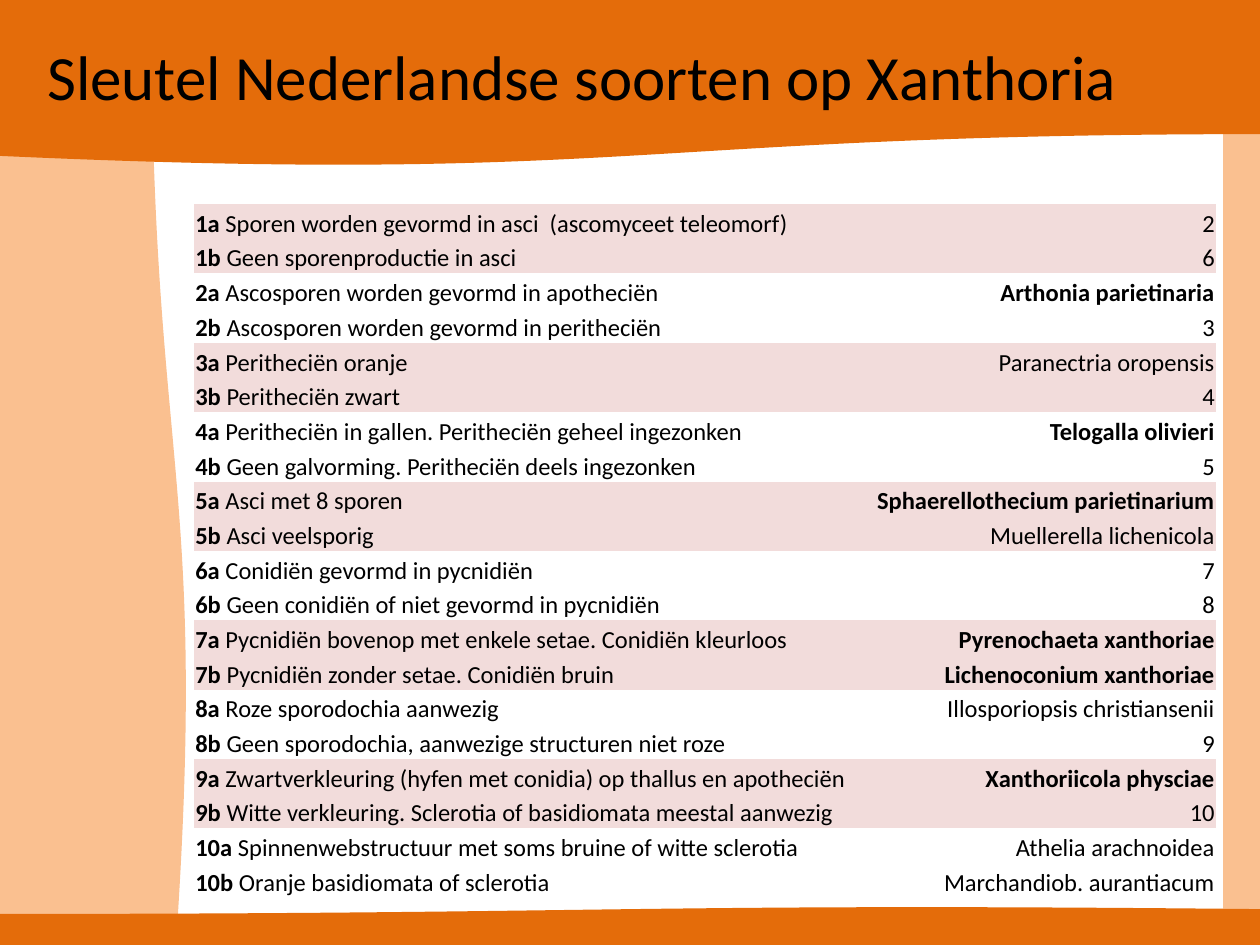
"""Build the slide with the key to Dutch species on Xanthoria."""
import pptx
import pptx.util
import pptx.dml.color
import pptx.enum.shapes
import pptx.enum.text
import pptx.oxml.ns

Pt = pptx.util.Pt
SHAPE = pptx.enum.shapes.MSO_SHAPE
ALIGN = pptx.enum.text.PP_ALIGN
ANCHOR = pptx.enum.text.MSO_ANCHOR

FONT = "Calibri"
COLORS = {"text": "000000", "side": "FAC090", "band": "E46C0A", "row": "F2DCDB"}
PLAIN_STYLE = "{2D5ABB26-0587-4C30-8999-92F81FD0307C}"
ROW = 19.84

FRAME = [
    (SHAPE.RECTANGLE, "side", 699.84, 0, 20.16, 540, 0),
    (SHAPE.FLOWCHART_DOCUMENT, "side", -216.72, 216.72, 540, 106.56, 270),
    (SHAPE.FLOWCHART_DOCUMENT, "band", 0, 0, 720, 94.32, 0),
    (SHAPE.FLOWCHART_DOCUMENT, "band", 0, 519.12, 720, 20.88, 180),
]

STEPS = [
    ("Sporen worden gevormd in asci  (ascomyceet teleomorf)", "2", False),
    ("Geen sporenproductie in asci", "6", False),
    ("Ascosporen worden gevormd in apotheciën", "Arthonia parietinaria", True),
    ("Ascosporen worden gevormd in peritheciën", "3", False),
    ("Peritheciën oranje", "Paranectria oropensis", False),
    ("Peritheciën zwart", "4", False),
    ("Peritheciën in gallen. Peritheciën geheel ingezonken", "Telogalla olivieri", True),
    ("Geen galvorming. Peritheciën deels ingezonken", "5", False),
    ("Asci met 8 sporen", "Sphaerellothecium parietinarium", True),
    ("Asci veelsporig", "Muellerella lichenicola", False),
    ("Conidiën gevormd in pycnidiën", "7", False),
    ("Geen conidiën of niet gevormd in pycnidiën", "8", False),
    ("Pycnidiën bovenop met enkele setae. Conidiën kleurloos", "Pyrenochaeta xanthoriae", True),
    ("Pycnidiën zonder setae. Conidiën bruin", "Lichenoconium xanthoriae", True),
    ("Roze sporodochia aanwezig", "Illosporiopsis christiansenii", False),
    ("Geen sporodochia, aanwezige structuren niet roze", "9", False),
    ("Zwartverkleuring (hyfen met conidia) op thallus en apotheciën",
     "Xanthoriicola physciae", True),
    ("Witte verkleuring. Sclerotia of basidiomata meestal aanwezig", "10", False),
    ("Spinnenwebstructuur met soms bruine of witte sclerotia", "Athelia arachnoidea", False),
    ("Oranje basidiomata of sclerotia", "Marchandiob. aurantiacum", False),
]


def color(name):
    return pptx.dml.color.RGBColor.from_string(COLORS[name])


def add_run(para, text, size, bold=False):
    run = para.add_run()
    run.text = text
    run.font.name = FONT
    run.font.size = Pt(size)
    run.font.bold = bold
    run.font.color.rgb = color("text")


def add_panel(slide, kind, tint, left, top, width, height, turn):
    panel = slide.shapes.add_shape(kind, Pt(left), Pt(top), Pt(width), Pt(height))
    panel.rotation = turn
    panel.shadow.inherit = False
    panel.fill.solid()
    panel.fill.fore_color.rgb = color(tint)
    panel.line.color.rgb = color(tint)
    panel.line.width = Pt(2)


def set_title(slide, text):
    title = slide.shapes.title
    title.left, title.top, title.width, title.height = Pt(-20.16), Pt(9.36), Pt(705.6), Pt(67.68)
    title.element.getparent().append(title.element)
    frame = title.text_frame
    frame.vertical_anchor = ANCHOR.MIDDLE
    para = frame.paragraphs[0]
    para.alignment = ALIGN.CENTER
    add_run(para, text, 36)


def fill_cell(cell, runs, align, shaded):
    cell.margin_left = cell.margin_right = cell.margin_top = Pt(0.72)
    cell.margin_bottom = 0
    cell.vertical_anchor = ANCHOR.BOTTOM
    if shaded:
        cell.fill.solid()
        cell.fill.fore_color.rgb = color("row")
    else:
        cell.fill.background()
    para = cell.text_frame.paragraphs[0]
    para.alignment = align
    for text, bold in runs:
        add_run(para, text, 14, bold)


def add_key(slide, steps):
    widths = (387.36, 196.56)
    frame = slide.shapes.add_table(
        len(steps), 2, Pt(110.88), Pt(116.64), Pt(sum(widths)), Pt(ROW * len(steps)))
    frame.element.find(".//" + pptx.oxml.ns.qn("a:tableStyleId")).text = PLAIN_STYLE
    table = frame.table
    table.first_row = table.horz_banding = False
    for col, width in zip(table.columns, widths):
        col.width = Pt(width)
    for i, (trait, result, bold) in enumerate(steps):
        table.rows[i].height = Pt(ROW)
        pair, side = divmod(i, 2)
        shaded = pair % 2 == 0
        label = f"{pair + 1}{'ab'[side]} "
        fill_cell(table.cell(i, 0), [(label, True), (trait, False)], ALIGN.LEFT, shaded)
        fill_cell(table.cell(i, 1), [(result, bold)], ALIGN.RIGHT, shaded)


def main():
    deck = pptx.Presentation()
    deck.slide_width, deck.slide_height = Pt(720), Pt(540)
    slide = deck.slides.add_slide(deck.slide_layouts[5])
    for panel in FRAME:
        add_panel(slide, *panel)
    set_title(slide, "Sleutel Nederlandse soorten op Xanthoria")
    add_key(slide, STEPS)
    deck.save("out.pptx")


if __name__ == "__main__":
    main()
